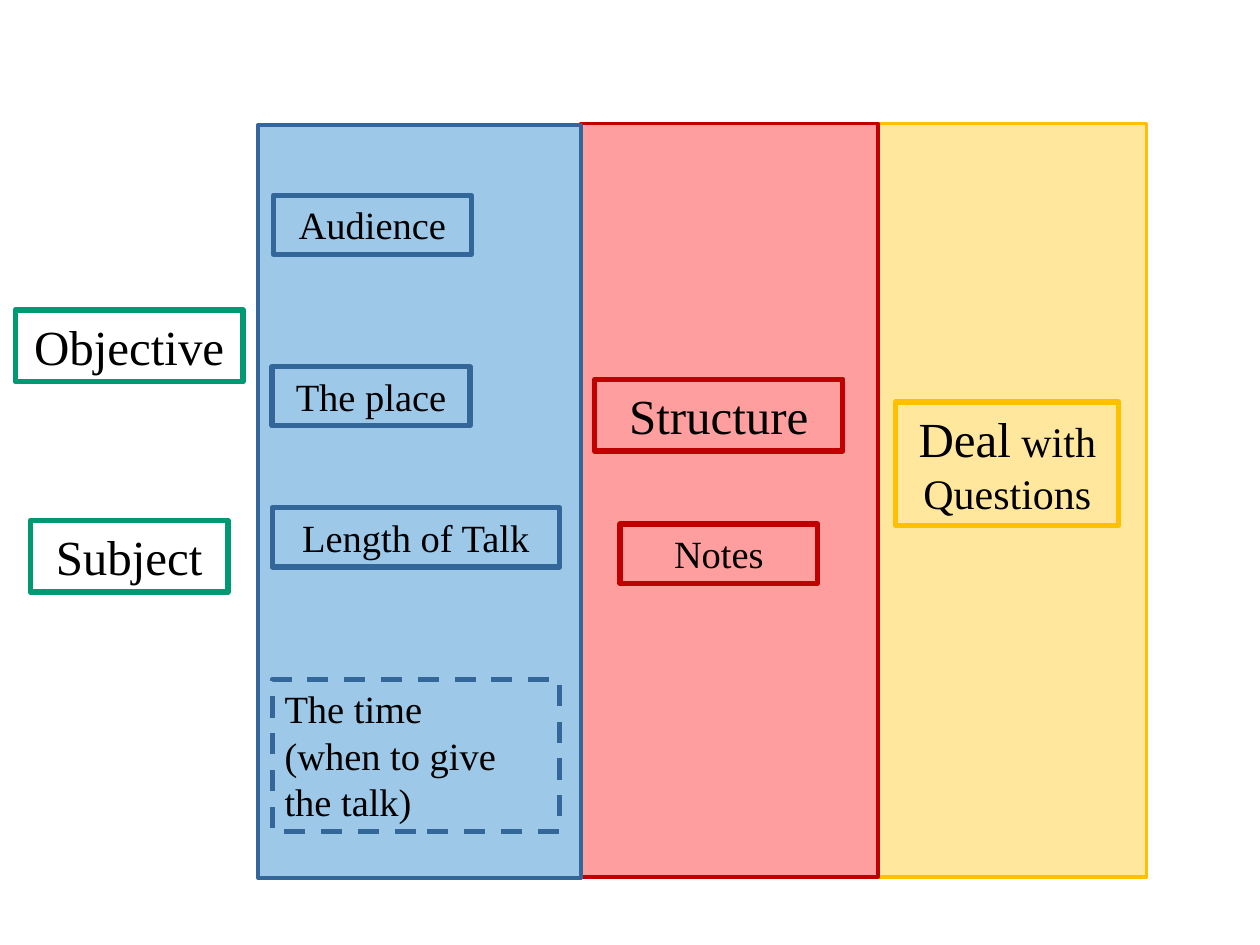
from dataclasses import dataclass

from lxml import etree
from pptx import Presentation
from pptx.dml.color import RGBColor
from pptx.enum.dml import MSO_LINE
from pptx.enum.shapes import MSO_SHAPE
from pptx.enum.text import MSO_AUTO_SIZE, PP_ALIGN
from pptx.oxml.ns import qn
from pptx.slide import Slide
from pptx.util import Inches, Pt

RECTANGLE = MSO_SHAPE.RECTANGLE
DASH = MSO_LINE.DASH
GROW = MSO_AUTO_SIZE.SHAPE_TO_FIT_TEXT
LEFT, CENTER = PP_ALIGN.LEFT, PP_ALIGN.CENTER
BLANK_LAYOUT = 6


@dataclass(frozen=True)
class Theme:
    font: str = "Times New Roman"
    text: str = "000000"
    green: str = "009973"
    blue: str = "336699"
    red: str = "C00000"
    yellow: str = "FFC000"
    blue_fill: str = "0070C0"
    red_fill: str = "FF0000"
    opacity: int = 38
    large: int = 28
    medium: int = 24
    small: int = 22
    panel_line: int = 2
    label_line: int = 3


THEME = Theme()


@dataclass(frozen=True)
class Panel:
    left: float
    top: float
    width: float
    fill: str
    line: str
    height: float = 5.98


@dataclass(frozen=True)
class Span:
    text: str
    size: int = THEME.small


@dataclass(frozen=True)
class Label:
    left: float
    top: float
    width: float
    height: float
    line: str
    paragraphs: tuple[tuple[Span, ...], ...]
    align: PP_ALIGN = CENTER
    dashed: bool = False


def large_label(left: float, top: float, width: float, line: str, text: str) -> Label:
    return Label(left, top, width, 0.57, line, ((Span(text, THEME.large),),))


def small_label(left: float, top: float, width: float, line: str, text: str) -> Label:
    return Label(left, top, width, 0.47, line, ((Span(text),),))


# Back to front: each column overlaps the edge of the one to its right.
PANELS = (
    Panel(6.97, 0.98, 2.13, THEME.yellow, THEME.yellow),
    Panel(4.61, 0.98, 2.36, THEME.red_fill, THEME.red),
    Panel(2.05, 0.99, 2.56, THEME.blue_fill, THEME.blue),
)

LABELS = (
    large_label(0.12, 2.46, 1.81, THEME.green, "Objective"),
    large_label(0.24, 4.13, 1.57, THEME.green, "Subject"),
    small_label(2.17, 1.55, 1.57, THEME.blue, "Audience"),
    small_label(2.16, 2.91, 1.57, THEME.blue, "The place"),
    small_label(2.16, 4.03, 2.28, THEME.blue, "Length of Talk"),
    Label(2.16, 5.39, 2.28, 1.21, THEME.blue,
          ((Span("The time"),), (Span("(when to give the talk)"),)), LEFT, True),
    large_label(4.72, 3.01, 1.97, THEME.red, "Structure"),
    small_label(4.92, 4.16, 1.57, THEME.red, "Notes"),
    Label(7.11, 3.19, 1.77, 0.98, THEME.yellow,
          ((Span("Deal", THEME.large), Span(" with Questions", THEME.medium)),)),
)


def set_line(shape, color: str, width: int) -> None:
    shape.line.color.rgb = RGBColor.from_string(color)
    shape.line.width = Pt(width)


def draw_panel(page: Slide, panel: Panel) -> None:
    shape = page.shapes.add_shape(RECTANGLE, Inches(panel.left), Inches(panel.top),
                                  Inches(panel.width), Inches(panel.height))
    shape.shadow.inherit = False
    shape.fill.solid()
    shape.fill.fore_color.rgb = RGBColor.from_string(panel.fill)
    color = shape.fill._xPr.find(qn("a:solidFill"))[0]
    etree.SubElement(color, qn("a:alpha"), val=str(THEME.opacity * 1000))
    set_line(shape, panel.line, THEME.panel_line)


def draw_label(page: Slide, label: Label) -> None:
    box = page.shapes.add_textbox(Inches(label.left), Inches(label.top),
                                  Inches(label.width), Inches(label.height))
    set_line(box, label.line, THEME.label_line)
    if label.dashed:
        box.line.dash_style = DASH
    frame = box.text_frame
    frame.word_wrap = True
    frame.auto_size = GROW
    for index, spans in enumerate(label.paragraphs):
        para = frame.add_paragraph() if index else frame.paragraphs[0]
        para.alignment = label.align
        for span in spans:
            run = para.add_run()
            run.text = span.text
            run.font.name = THEME.font
            run.font.size = Pt(span.size)
            run.font.color.rgb = RGBColor.from_string(THEME.text)


def main() -> None:
    deck = Presentation()
    deck.slide_width, deck.slide_height = Inches(10), Inches(7.5)
    page = deck.slides.add_slide(deck.slide_layouts[BLANK_LAYOUT])
    for panel in PANELS:
        draw_panel(page, panel)
    for label in LABELS:
        draw_label(page, label)
    deck.save("out.pptx")


if __name__ == "__main__":
    main()
